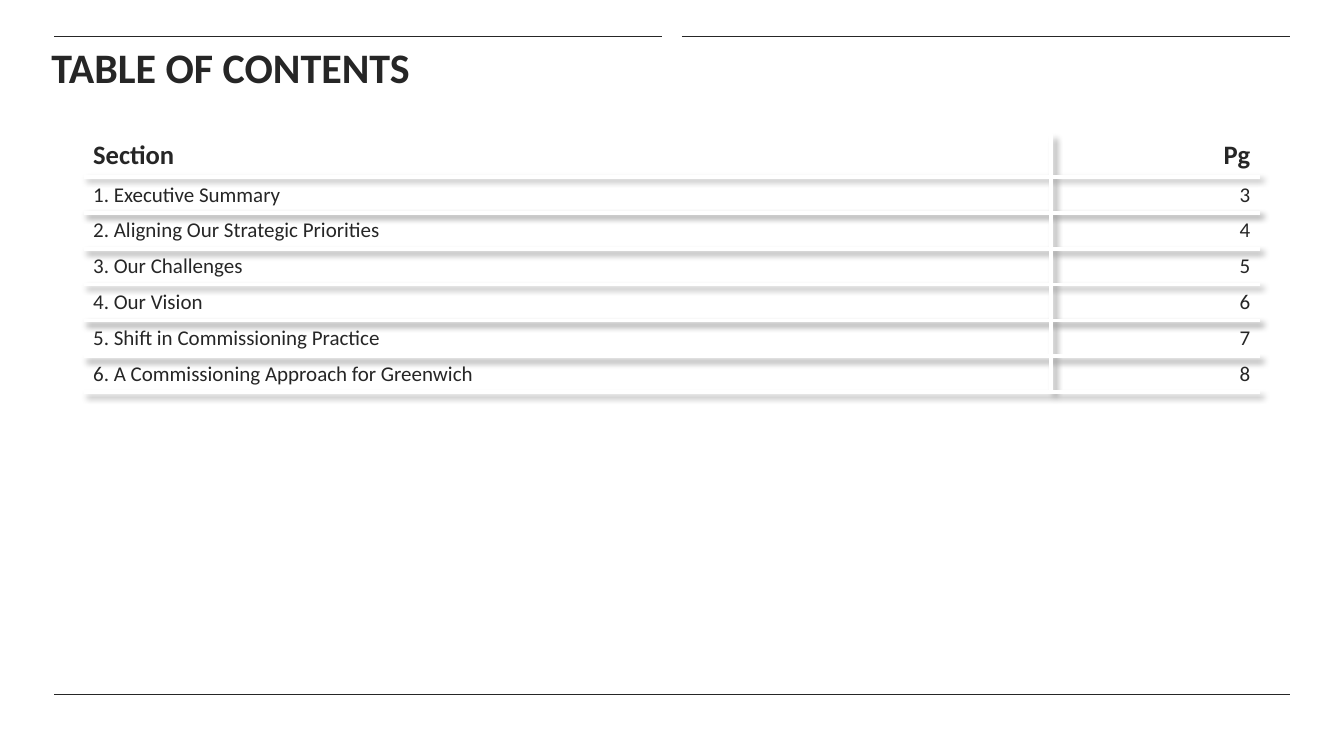
from lxml import etree
from pptx import Presentation
from pptx.dml.color import RGBColor
from pptx.enum.shapes import MSO_CONNECTOR
from pptx.enum.text import MSO_ANCHOR, PP_ALIGN
from pptx.oxml import parse_xml
from pptx.oxml.ns import nsdecls, qn
from pptx.util import Pt

INK = RGBColor(0x26, 0x26, 0x26)
WHITE = RGBColor(0xFF, 0xFF, 0xFF)
FONT = "Calibri"
LEFT, RIGHT = PP_ALIGN.LEFT, PP_ALIGN.RIGHT
TOP = MSO_ANCHOR.TOP
STRAIGHT = MSO_CONNECTOR.STRAIGHT
NO_STYLE = "{2D5ABB26-0587-4C30-8999-92F81FD0307C}"

SECTIONS = [
    "Executive Summary",
    "Aligning Our Strategic Priorities",
    "Our Challenges",
    "Our Vision",
    "Shift in Commissioning Practice",
    "A Commissioning Approach for Greenwich",
]
FIRST_PAGE = 3
HEADER_HEIGHT, ROW_HEIGHT = 30.5, 25.5


def write(tf, text, size, bold=False, align=LEFT, spacing=None):
    p = tf.paragraphs[0]
    p.alignment = align
    if spacing:
        p.line_spacing = spacing
    r = p.add_run()
    r.text = text
    r.font.name = FONT
    r.font.size = Pt(size)
    r.font.bold = bold
    r.font.color.rgb = INK


def add_rule(s, x1, x2, y):
    line = s.shapes.add_connector(STRAIGHT, Pt(x1), Pt(y), Pt(x2), Pt(y))
    line.line.color.rgb = INK
    line.line.width = Pt(0.25)
    etree.SubElement(line._element.spPr, qn("a:effectLst"))


def add_frame(s, left, top, width, height, gap):
    right = left + width
    middle = left + width / 2
    add_rule(s, left, middle - gap / 2, top)
    add_rule(s, middle + gap / 2, right, top)
    add_rule(s, left, right, top + height)


def add_title(s, left, top, width, height):
    sp = s.shapes.add_textbox(Pt(left), Pt(top), Pt(width), Pt(height))
    tf = sp.text_frame
    tf.word_wrap = True
    tf.vertical_anchor = TOP
    tf.margin_left = tf.margin_right = tf.margin_top = tf.margin_bottom = 0
    write(tf, "TABLE OF CONTENTS", 30, bold=True, spacing=1.07)


def set_borders(cell, visible):
    props = cell._tc.get_or_add_tcPr()
    for i, side in enumerate("LRTB"):
        if side in visible:
            fill = f'<a:solidFill><a:srgbClr val="{WHITE}"/></a:solidFill>'
        else:
            fill = "<a:noFill/>"
        props.insert(i, parse_xml(
            f'<a:ln{side} {nsdecls("a")} w="{Pt(3)}">{fill}</a:ln{side}>'))


def add_shadow(table):
    props = table._tbl.tblPr
    props.find(qn("a:tableStyleId")).text = NO_STYLE
    props.insert(0, parse_xml(
        f'<a:effectLst {nsdecls("a")}>'
        f'<a:outerShdw blurRad="{Pt(4)}" dist="{Pt(3)}" dir="3600000" algn="tl">'
        '<a:srgbClr val="000000"><a:alpha val="40000"/></a:srgbClr>'
        "</a:outerShdw></a:effectLst>"))


def add_contents(s, left, top, width, page_width):
    rows = [("Section", "Pg")]
    rows += [(f"{i + 1}. {name}", str(FIRST_PAGE + i))
             for i, name in enumerate(SECTIONS)]
    height = HEADER_HEIGHT + ROW_HEIGHT * len(SECTIONS)
    table = s.shapes.add_table(len(rows), 2, Pt(left), Pt(top),
                               Pt(width), Pt(height)).table
    table.horz_banding = False
    add_shadow(table)
    table.columns[0].width = Pt(width - page_width)
    table.columns[1].width = Pt(page_width)
    for i, row in enumerate(rows):
        header = i == 0
        table.rows[i].height = Pt(HEADER_HEIGHT if header else ROW_HEIGHT)
        for j, text in enumerate(row):
            cell = table.cell(i, j)
            cell.margin_left = cell.margin_right = Pt(6.75)
            cell.margin_top = cell.margin_bottom = Pt(3.6)
            cell.fill.background()
            inner = "L" if j else "R"
            set_borders(cell, inner + ("B" if header else "TB"))
            write(cell.text_frame, text, 19 if header else 15, bold=header,
                  align=RIGHT if j else LEFT)


def main():
    prs = Presentation()
    prs.slide_width, prs.slide_height = Pt(960), Pt(540)
    s = prs.slides.add_slide(prs.slide_layouts[6])
    add_frame(s, 38.6, 26, 882.6, 470.2, gap=14.4)
    add_contents(s, 59.8, 96, 840, page_width=149)
    add_title(s, 36.7, 27.4, 879, 51)
    prs.save("out.pptx")


if __name__ == "__main__":
    main()
